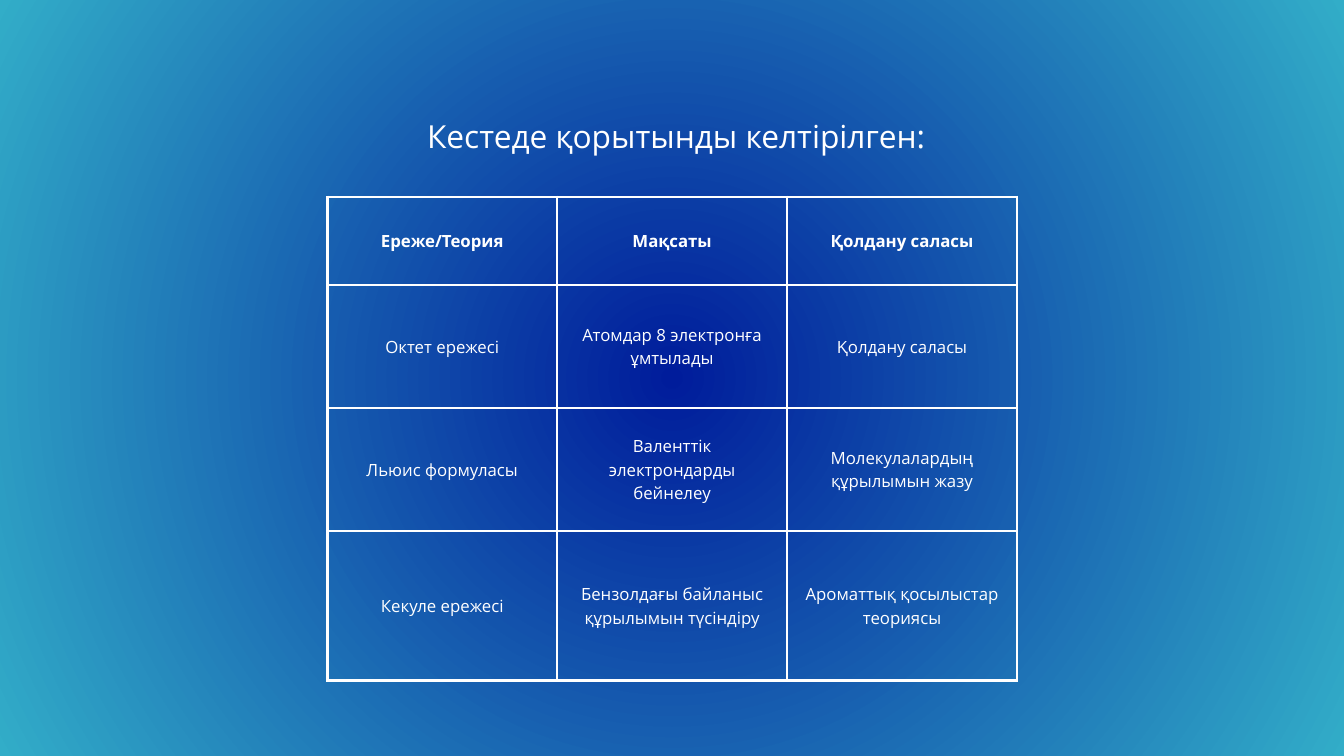
from dataclasses import dataclass

from lxml.etree import SubElement
from pptx import Presentation
from pptx.dml.color import RGBColor
from pptx.enum.text import MSO_ANCHOR, MSO_AUTO_SIZE, PP_ALIGN
from pptx.oxml.ns import qn
from pptx.util import Cm, Pt

COLORS = {"center": "001C9B", "edge": "32ADC8", "text": "FFFFFF", "border": "FFFFFF"}
FONT = "Open Sans"
LINE_RATIO = 1.4  # line spacing relative to text size
LEFT, COLUMN_WIDTH = 12.37, 8.69
TABLE_TOP = 7.44
BORDER_WIDTH = Pt(3)


@dataclass
class Row:
    height: float
    cells: tuple[str, str, str]
    bold: bool = False


ROWS = [
    Row(3.33, ("Ереже/Теория", "Мақсаты", "Қолдану саласы"), bold=True),
    Row(4.65, ("Октет ережесі", "Атомдар 8 электронға ұмтылады", "Қолдану саласы")),
    Row(4.65, ("Льюис формуласы", "Валенттік электрондарды бейнелеу",
               "Молекулалардың құрылымын жазу")),
    Row(5.66, ("Кекуле ережесі", "Бензолдағы байланыс құрылымын түсіндіру",
               "Ароматтық қосылыстар теориясы")),
]
TABLE_WIDTH = COLUMN_WIDTH * len(ROWS[0].cells)


def set_attributes(target, values: dict) -> None:
    for name, value in values.items():
        setattr(target, name, value)


def margins(length: float) -> dict:
    return {f"margin_{side}": Cm(length) for side in ("left", "top", "right", "bottom")}


def write_text(frame, text: str, size: float, bold: bool = False) -> None:
    frame.word_wrap = True
    paragraph = frame.paragraphs[0]
    set_attributes(paragraph, {"alignment": PP_ALIGN.CENTER,
                               "line_spacing": Pt(size * LINE_RATIO),
                               "space_before": Pt(0)})
    run = paragraph.add_run()
    run.text = text
    set_attributes(run.font, {"name": FONT, "size": Pt(size), "bold": bold})
    run.font.color.rgb = RGBColor.from_string(COLORS["text"])


def draw_borders(cell) -> None:
    properties = cell._tc.get_or_add_tcPr()
    for side in ("lnL", "lnR", "lnT", "lnB"):
        line = SubElement(properties, qn(f"a:{side}"), w=str(BORDER_WIDTH))
        fill = SubElement(line, qn("a:solidFill"))
        SubElement(fill, qn("a:srgbClr"), val=COLORS["border"])


def draw_background(slide) -> None:
    fill = slide.background.fill
    fill.gradient()
    for stop, name in zip(fill.gradient_stops, ("center", "edge")):
        stop.color.rgb = RGBColor.from_string(COLORS[name])
    # Turn the linear gradient into a circular one around the middle
    gradient = next(slide.element.iter(qn("a:gradFill")))
    gradient.remove(gradient.find(qn("a:lin")))
    circle = SubElement(gradient, qn("a:path"), path="circle")
    SubElement(circle, qn("a:fillToRect"), {side: "50000" for side in "ltrb"})


def draw_title(slide, text: str) -> None:
    title = slide.shapes.title
    set_attributes(title, {"left": Cm(LEFT), "top": Cm(4.17),
                           "width": Cm(TABLE_WIDTH), "height": Cm(1.6)})
    set_attributes(title.text_frame, margins(0) | {
        "vertical_anchor": MSO_ANCHOR.TOP,
        "auto_size": MSO_AUTO_SIZE.SHAPE_TO_FIT_TEXT})
    write_text(title.text_frame, text, 34)


def draw_table(slide, rows: list[Row]) -> None:
    table = slide.shapes.add_table(
        len(rows), len(rows[0].cells), Cm(LEFT), Cm(TABLE_TOP),
        Cm(TABLE_WIDTH), Cm(sum(row.height for row in rows))).table
    set_attributes(table, {"first_row": False, "horz_banding": False})
    for column in table.columns:
        column.width = Cm(COLUMN_WIDTH)
    for row_index, row in enumerate(rows):
        table.rows[row_index].height = Cm(row.height)
        for column_index, text in enumerate(row.cells):
            cell = table.cell(row_index, column_index)
            set_attributes(cell, margins(0.53) | {"vertical_anchor": MSO_ANCHOR.MIDDLE})
            draw_borders(cell)
            cell.fill.background()
            write_text(cell.text_frame, text, 18, row.bold)


def main() -> None:
    presentation = Presentation()
    set_attributes(presentation, {"slide_width": Cm(50.8), "slide_height": Cm(28.58)})
    slide = presentation.slides.add_slide(presentation.slide_layouts[5])
    draw_background(slide)
    draw_table(slide, ROWS)
    draw_title(slide, " Кестеде қорытынды келтірілген:")
    presentation.save("out.pptx")


if __name__ == "__main__":
    main()
